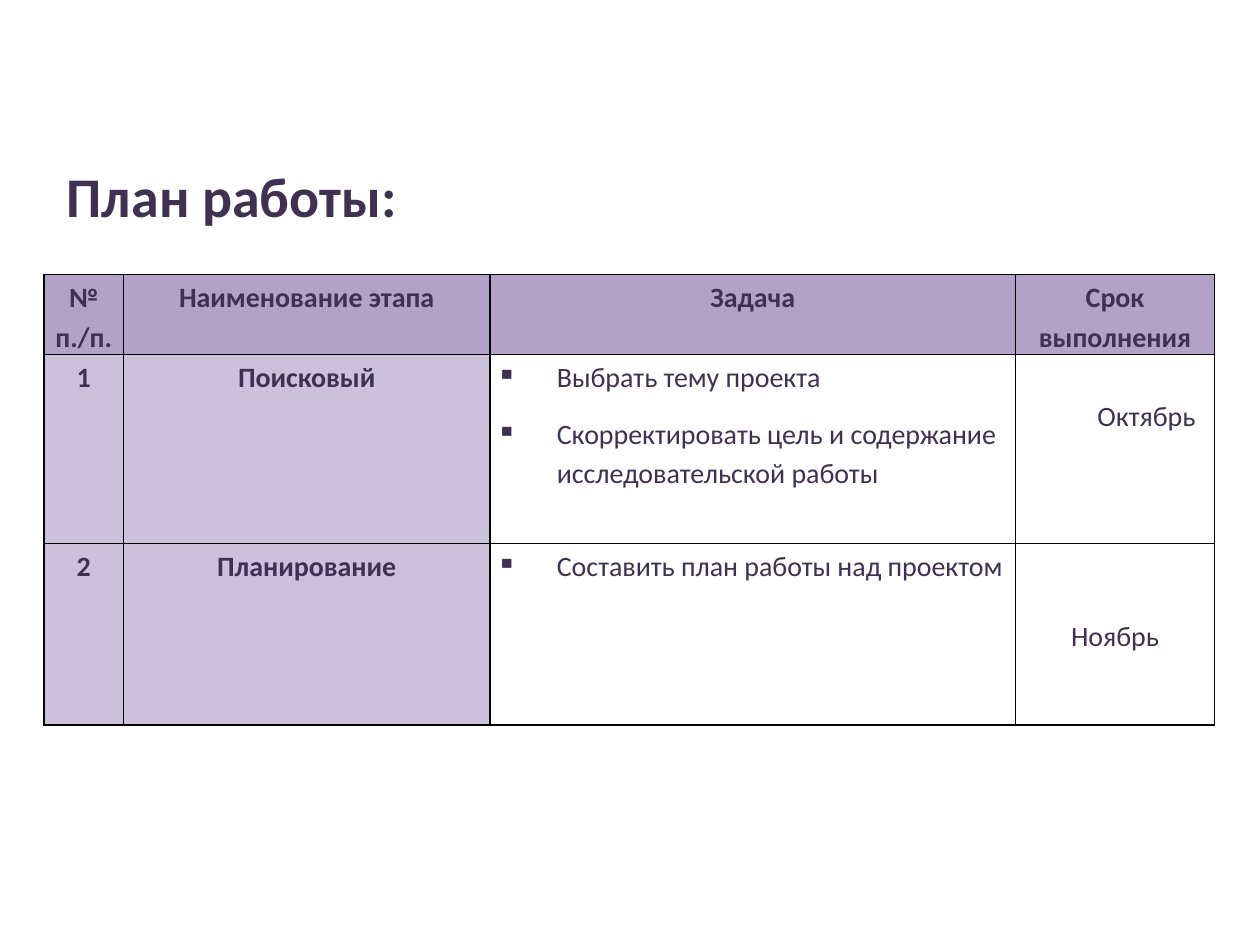
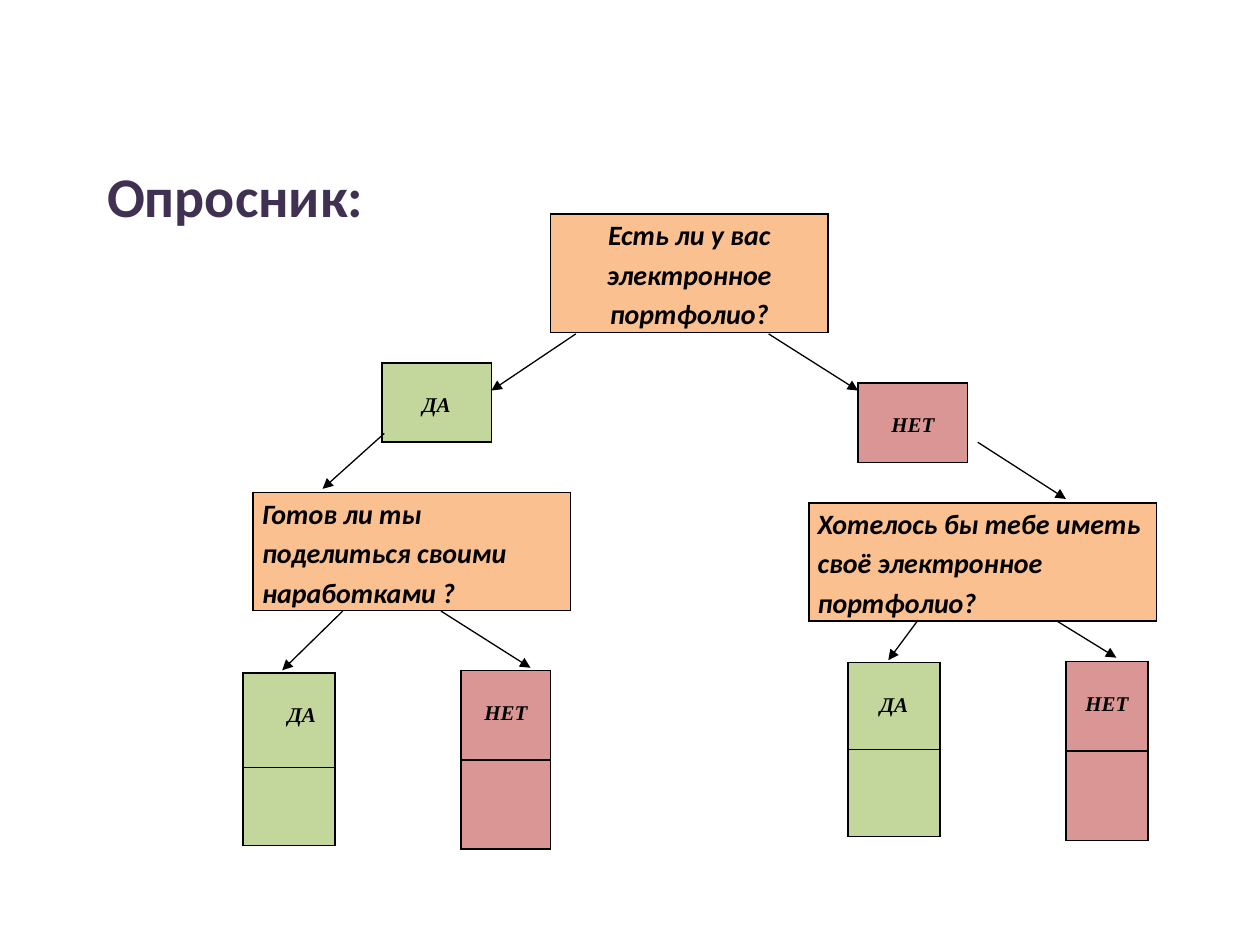
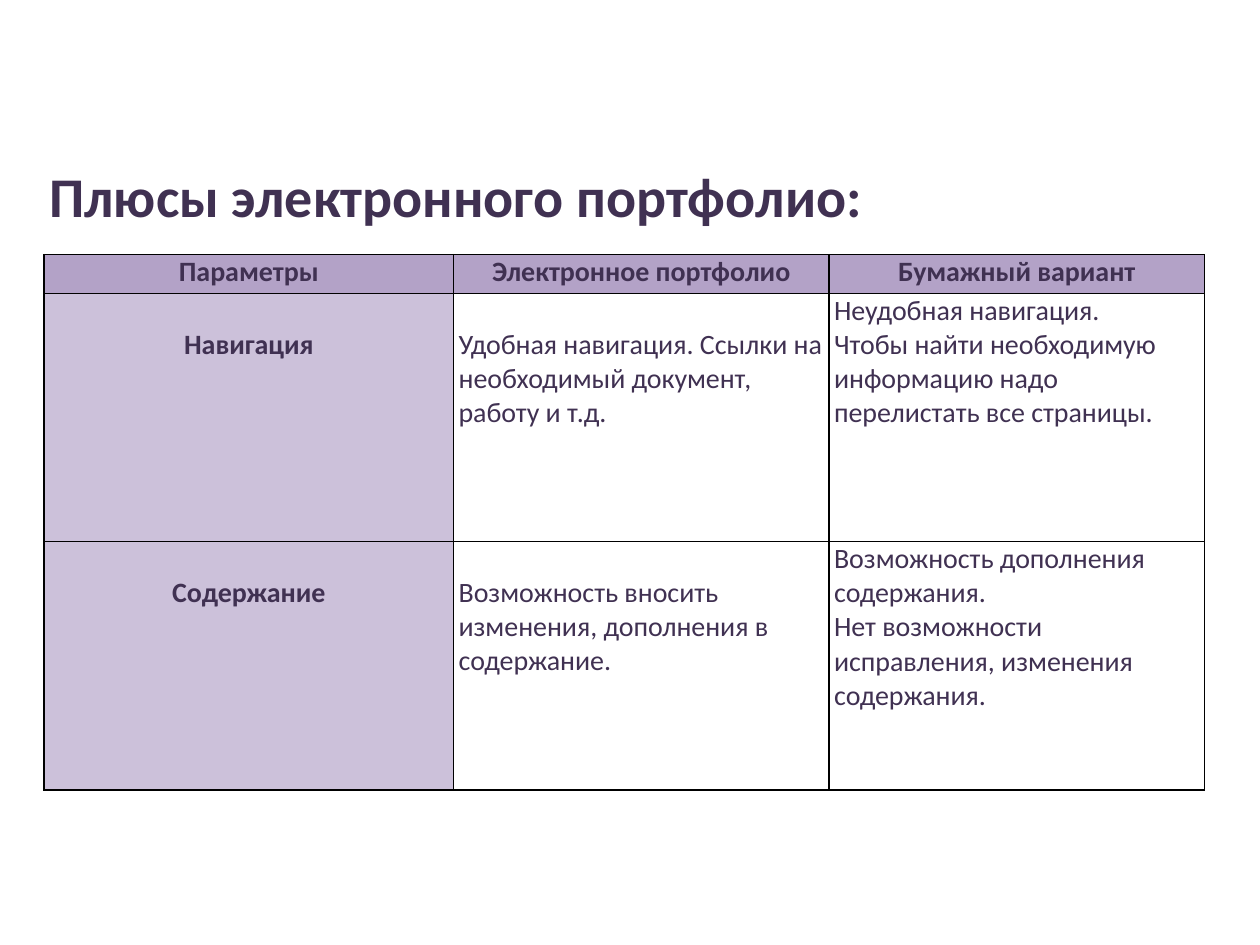
from lxml.etree import SubElement
from pptx import Presentation
from pptx.dml.color import RGBColor
from pptx.enum.shapes import MSO_CONNECTOR
from pptx.enum.text import MSO_ANCHOR, PP_ALIGN
from pptx.oxml.ns import qn
from pptx.util import Inches, Pt

COLORS = {
    "ink": "403152",
    "black": "000000",
    "header": "B3A2C7",
    "stub": "CCC1DA",
    "question": "FAC090",
    "yes": "C3D69B",
    "no": "D99694",
}
TITLE_FONT = {"name": "Calibri", "size": Pt(32), "bold": True}
BODY_FONT = {"name": "Calibri", "size": Pt(16), "bold": False}
STRONG_FONT = {**BODY_FONT, "bold": True}
QUESTION_FONT = {**STRONG_FONT, "italic": True}
ANSWER_FONT = {"name": "Times New Roman", "size": Pt(12), "bold": True, "italic": True}
CENTERED = {"alignment": PP_ALIGN.CENTER}
LEFT = {"alignment": PP_ALIGN.LEFT}
LOOSE = {"line_spacing": 1.15, "space_after": Pt(10)}
BULLET_INDENT = 0.48

PLAN_HEADERS = ["№ п./п.", "Наименование этапа", "Задача", "Срок выполнения"]
PLAN_STAGES = [
    (
        "1",
        "Поисковый",
        "Выбрать тему проекта\n"
        "Скорректировать цель и содержание исследовательской работы",
        "Октябрь",
        {"insets": (0.55, 0.32, 0.05, 0)},
    ),
    (
        "2",
        "Планирование",
        "Составить план работы над проектом",
        "Ноябрь",
        {"insets": (0, 0, 0, 0), "anchor": MSO_ANCHOR.MIDDLE},
    ),
]
COMPARISON_HEADERS = ["Параметры", "Электронное портфолио", "Бумажный вариант"]
COMPARISON = [
    (
        "Навигация",
        "Удобная навигация. Ссылки на необходимый документ, работу и т.д.",
        "Неудобная навигация.\n"
        "Чтобы найти необходимую информацию надо перелистать все страницы.",
    ),
    (
        "Содержание",
        "Возможность вносить изменения, дополнения в содержание.",
        "Возможность дополнения содержания.\n"
        "Нет возможности исправления, изменения содержания.",
    ),
]
QUESTIONS = [
    (2.47, 0, 2.2, "Есть ли у вас электронное портфолио?", CENTERED),
    (0.11, 2.21, 2.52, "Готов ли ты поделиться своими наработками ?", LEFT),
    (4.52, 2.29, 2.76, "Хотелось бы тебе иметь своё электронное портфолио?", LEFT),
]
ANSWERS = [
    (1.13, 1.18, 0.87, [0.63], "yes", 0),
    (4.91, 1.34, 0.87, [0.63], "no", 0),
    (0.03, 3.64, 0.73, [0.75, 0.62], "yes", 0.2),
    (1.76, 3.62, 0.71, [0.71, 0.71], "no", 0),
    (4.83, 3.56, 0.73, [0.69, 0.69], "yes", 0),
    (6.56, 3.55, 0.65, [0.71, 0.71], "no", 0),
]
ANSWER_WORDS = {"yes": "ДА", "no": "НЕТ"}
ARROWS = [
    (2.67, 0.95, 2.0, 1.4),
    (4.2, 0.95, 4.91, 1.4),
    (1.15, 1.74, 0.66, 2.18),
    (5.86, 1.81, 6.56, 2.26),
    (0.82, 3.15, 0.34, 3.62),
    (1.6, 3.15, 2.31, 3.6),
    (5.38, 3.23, 5.15, 3.54),
    (6.49, 3.23, 6.96, 3.52),
]


def apply_format(target, values):
    """Set every attribute in a dict of format values."""
    for attribute, value in values.items():
        setattr(target, attribute, value)


def format_text(text_frame, font, layout, color):
    """Format all paragraphs and runs of a text frame."""
    for paragraph in text_frame.paragraphs:
        apply_format(paragraph, layout)
        for run in paragraph.runs:
            apply_format(run.font, font)
            run.font.color.rgb = RGBColor.from_string(COLORS[color])


def add_titled_slide(deck, heading, left, width):
    """Add a slide with its heading in the title placeholder."""
    slide = deck.slides.add_slide(deck.slide_layouts[5])
    title = slide.shapes.title
    place = {"left": left, "top": 1.23, "width": width, "height": 0.64}
    apply_format(title, {side: Inches(length) for side, length in place.items()})
    title.text_frame.text = heading
    apply_format(
        title.text_frame,
        {"word_wrap": False, "vertical_anchor": MSO_ANCHOR.MIDDLE},
    )
    format_text(title.text_frame, TITLE_FONT, LEFT, "ink")
    return slide


def add_borders(cell):
    """Draw thin black borders on all sides of a cell."""
    properties = cell._tc.get_or_add_tcPr()
    for side in ("lnL", "lnR", "lnT", "lnB"):
        border = SubElement(properties, qn(f"a:{side}"), w=str(Pt(1)))
        fill = SubElement(border, qn("a:solidFill"))
        SubElement(fill, qn("a:srgbClr"), val=COLORS["black"])


def add_grid(slide, left, top, widths, heights):
    """Add a bordered table without a banded style."""
    grid = slide.shapes.add_table(
        len(heights), len(widths), Inches(left), Inches(top),
        Inches(sum(widths)), Inches(sum(heights)),
    ).table
    apply_format(grid, {"first_row": False, "horz_banding": False})
    for column, width in zip(grid.columns, widths):
        column.width = Inches(width)
    for row, height in zip(grid.rows, heights):
        row.height = Inches(height)
    for cell in grid.iter_cells():
        add_borders(cell)
        cell.fill.background()
    return grid


def fill_cell(cell, color):
    """Give a cell a solid fill."""
    cell.fill.solid()
    cell.fill.fore_color.rgb = RGBColor.from_string(COLORS[color])


def write_cell(cell, text, font, layout, insets, fill=None, ink="ink",
               anchor=MSO_ANCHOR.TOP):
    """Write formatted text in a cell with left, top, right, bottom insets."""
    for side, inset in zip(("left", "top", "right", "bottom"), insets):
        setattr(cell, f"margin_{side}", Inches(inset))
    cell.vertical_anchor = anchor
    cell.text_frame.text = text
    format_text(cell.text_frame, font, layout, ink)
    if fill:
        fill_cell(cell, fill)


def add_bullets(text_frame):
    """Give each paragraph a square bullet and a hanging indent."""
    for paragraph in text_frame.paragraphs:
        properties = paragraph._p.get_or_add_pPr()
        properties.set("marL", str(Inches(BULLET_INDENT)))
        properties.set("indent", str(-Inches(BULLET_INDENT)))
        SubElement(properties, qn("a:buChar"), char="▪")


def add_plan(slide, left, top):
    """Add the table of project stages."""
    plan = add_grid(slide, left, top, [0.63, 2.91, 4.17, 1.58], [0.63, 1.5, 1.44])
    insets = (0.05, 0.01, 0.05, 0)
    middle = {**CENTERED, **LOOSE}
    for column, header in enumerate(PLAN_HEADERS):
        write_cell(plan.cell(0, column), header, STRONG_FONT, middle, insets, "header")
    for row, (number, stage, tasks, month, month_place) in enumerate(PLAN_STAGES, 1):
        for column, label in enumerate((number, stage)):
            write_cell(plan.cell(row, column), label, STRONG_FONT, middle, insets, "stub")
        task_cell = plan.cell(row, 2)
        write_cell(task_cell, tasks, BODY_FONT, LOOSE, insets)
        add_bullets(task_cell.text_frame)
        write_cell(plan.cell(row, 3), month, BODY_FONT, middle, **month_place)


def add_arrow(slide, start_x, start_y, end_x, end_y):
    """Add a thin black arrow between two points."""
    arrow = slide.shapes.add_connector(
        MSO_CONNECTOR.STRAIGHT,
        *(Inches(length) for length in (start_x, start_y, end_x, end_y)),
    )
    arrow.line.width = Pt(0.75)
    arrow.line.color.rgb = RGBColor.from_string(COLORS["black"])
    SubElement(arrow.line._get_or_add_ln(), qn("a:tailEnd"), type="triangle")
    SubElement(arrow._element.spPr, qn("a:effectLst"))


def add_survey(slide, left, top):
    """Add the tree of questions and answers."""
    for x, y, width, question, alignment in QUESTIONS:
        box = add_grid(slide, left + x, top + y, [width], [0.92])
        write_cell(box.cell(0, 0), question, QUESTION_FONT, {**alignment, **LOOSE},
                   (0.07, 0, 0.07, 0), "question", "black")
    for x, y, width, heights, answer, shift in ANSWERS:
        box = add_grid(slide, left + x, top + y, [width], heights)
        for cell in box.iter_cells():
            fill_cell(cell, answer)
        write_cell(box.cell(0, 0), ANSWER_WORDS[answer], ANSWER_FONT,
                   {**CENTERED, **LOOSE}, (0.07 + shift, 0.22, 0.07, 0), ink="black",
                   fill=answer)
    for start_x, start_y, end_x, end_y in ARROWS:
        add_arrow(slide, left + start_x, top + start_y, left + end_x, top + end_y)


def add_comparison(slide, left, top):
    """Add the table comparing electronic and paper portfolios."""
    table = add_grid(slide, left, top, [3.25, 2.98, 2.98], [0.31, 1.97, 1.97])
    insets = (0.04, 0, 0.04, 0)
    lowered = (0.04, 0.27, 0.04, 0)
    for column, header in enumerate(COMPARISON_HEADERS):
        write_cell(table.cell(0, column), header, STRONG_FONT, CENTERED, insets, "header")
    for row, (parameter, electronic, paper) in enumerate(COMPARISON, 1):
        write_cell(table.cell(row, 0), parameter, STRONG_FONT, CENTERED, lowered, "stub")
        write_cell(table.cell(row, 1), electronic, BODY_FONT, LEFT, lowered)
        write_cell(table.cell(row, 2), paper, BODY_FONT, LEFT, insets)


def main():
    """Build and save the presentation."""
    deck = Presentation()
    apply_format(deck, {"slide_width": Inches(10), "slide_height": Inches(7.5)})
    add_plan(add_titled_slide(deck, "План работы:", 0.43, 2.85), 0.35, 2.18)
    add_survey(add_titled_slide(deck, "Опросник:", 0.75, 2.26), 1.9, 1.7)
    add_comparison(
        add_titled_slide(deck, "Плюсы электронного портфолио:", 0.29, 6.72), 0.35, 2.02
    )
    deck.save("out.pptx")


if __name__ == "__main__":
    main()
